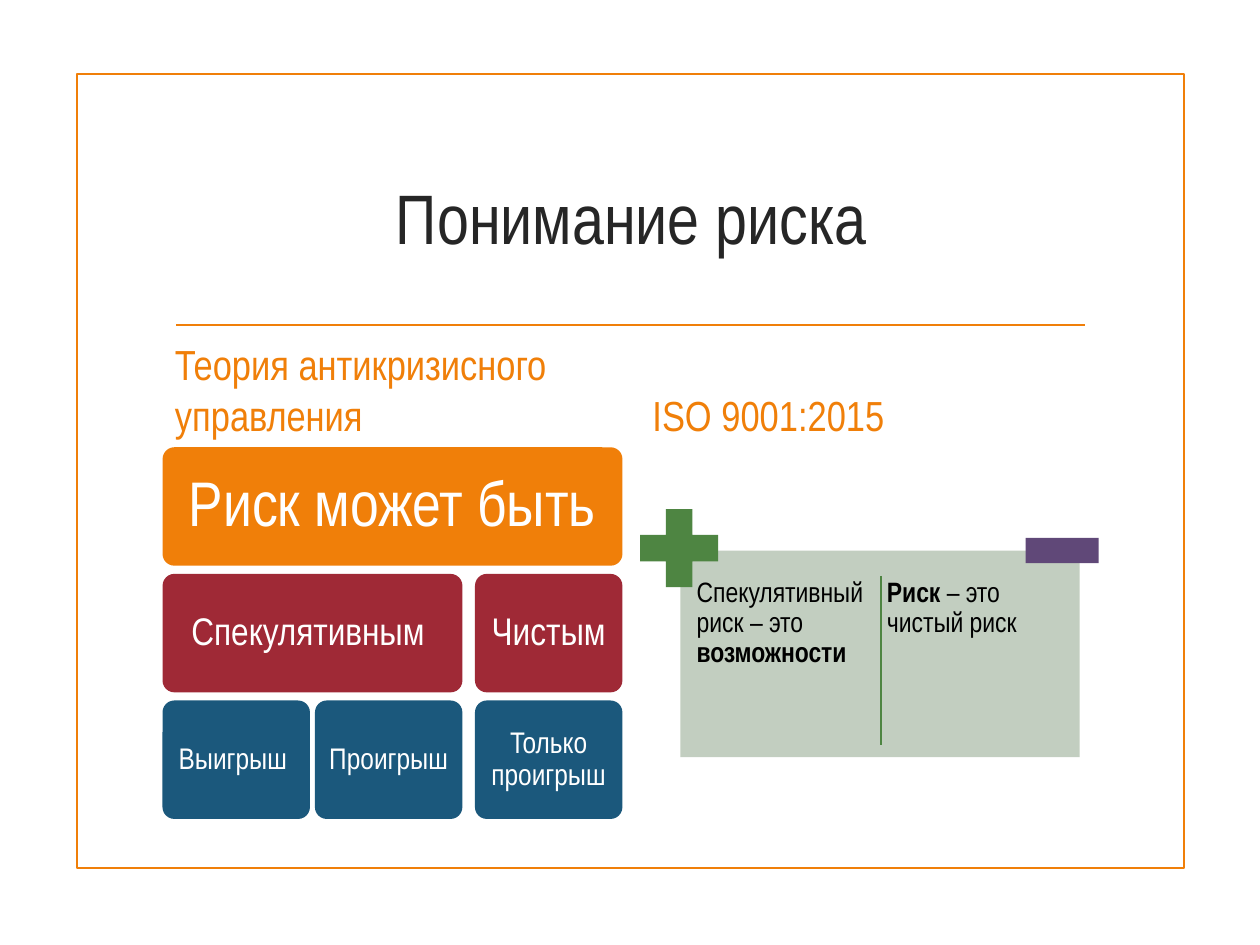
"""Build the slide on understanding risk."""
from typing import NamedTuple

from lxml import etree
from pptx import Presentation
from pptx.dml.color import RGBColor
from pptx.enum.shapes import MSO_CONNECTOR, MSO_SHAPE
from pptx.enum.text import MSO_ANCHOR, PP_ALIGN
from pptx.oxml.ns import qn
from pptx.util import Inches, Pt

RECT, ROUND, PLUS = MSO_SHAPE.RECTANGLE, MSO_SHAPE.ROUNDED_RECTANGLE, MSO_SHAPE.CROSS
STRAIGHT = MSO_CONNECTOR.STRAIGHT
TOP, MIDDLE, BOTTOM = MSO_ANCHOR.TOP, MSO_ANCHOR.MIDDLE, MSO_ANCHOR.BOTTOM
LEFT, CENTER = PP_ALIGN.LEFT, PP_ALIGN.CENTER

ORANGE = RGBColor(0xF0, 0x7F, 0x09)
RED = RGBColor(0x9F, 0x29, 0x36)
BLUE = RGBColor(0x1B, 0x58, 0x7C)
GREEN = RGBColor(0x4E, 0x85, 0x42)
PURPLE = RGBColor(0x60, 0x48, 0x78)
SAGE = RGBColor(0xC2, 0xCE, 0xC0)
DARK = RGBColor(0x26, 0x26, 0x26)
BLACK = RGBColor(0, 0, 0)
WHITE = RGBColor(0xFF, 0xFF, 0xFF)

FONT = "Arial Narrow"
LINE_WIDTH = Pt(1.25)
TREE_LEFT, TREE_TOP = 1.29, 3.55
TILE_H, ROW_STEP = 0.94, 1.005


class Box(NamedTuple):
    left: float
    top: float
    width: float
    height: float


class Run(NamedTuple):
    text: str
    bold: bool = False


class Style(NamedTuple):
    size: int
    color: RGBColor
    align: PP_ALIGN = LEFT
    anchor: MSO_ANCHOR = TOP
    inset: float = 0.03
    spacing: float = 0.9


class Level(NamedTuple):
    fill: RGBColor
    size: int
    inset: float


class Tile(NamedTuple):
    text: str
    row: int
    offset: float
    width: float


class Label(NamedTuple):
    box: Box
    runs: list[Run]
    style: Style


TITLE = Style(40, DARK, CENTER, MIDDLE, 0.1, 1)
HEADING = Style(24, ORANGE, LEFT, BOTTOM, 0.1, 1)
OPINION = Style(16, BLACK)

LEVELS = [Level(ORANGE, 36, 0.15), Level(RED, 22, 0.09), Level(BLUE, 17, 0.07)]
TILES = [
    Tile("Риск может быть", 0, 0, 3.65),
    Tile("Спекулятивным ", 1, 0, 2.38),
    Tile("Чистым ", 1, 2.48, 1.17),
    Tile("Выигрыш ", 2, 0, 1.17),
    Tile("Проигрыш ", 2, 1.21, 1.17),
    Tile("Только проигрыш", 2, 2.48, 1.17),
]
LABELS = [
    Label(Box(1.29, 1, 7.44, 1.43), [Run("Понимание риска")], TITLE),
    Label(Box(1.29, 2.91, 3.65, 0.63), [Run("Теория антикризисного управления")], HEADING),
    Label(Box(5.08, 2.91, 3.65, 0.63), [Run("ISO 9001:2015")], HEADING),
    Label(Box(5.5, 4.56, 1.47, 1.4),
          [Run("Спекулятивный риск – это "), Run("возможности", True)], OPINION),
    Label(Box(7.01, 4.56, 1.47, 1.4),
          [Run("Риск", True), Run(" – это чистый риск")], OPINION),
]


def write(sp, runs: list[Run], style: Style) -> None:
    tf = sp.text_frame
    tf.word_wrap = True
    tf.vertical_anchor = style.anchor
    tf.margin_left = tf.margin_right = Inches(style.inset)
    tf.margin_top = tf.margin_bottom = Inches(min(style.inset, 0.05) if style.inset == 0.1 else style.inset)
    p = tf.paragraphs[0]
    p.alignment = style.align
    p.line_spacing = style.spacing
    for run in runs:
        r = p.add_run()
        r.text = run.text
        r.font.name = FONT
        r.font.size = Pt(style.size)
        r.font.bold = run.bold
        r.font.color.rgb = style.color


def add_block(s, kind: MSO_SHAPE, box: Box, fill: RGBColor, adjust: float | None = None):
    sp = s.shapes.add_shape(kind, *map(Inches, box))
    sp.shadow.inherit = False
    sp.fill.solid()
    sp.fill.fore_color.rgb = fill
    sp.line.fill.background()
    if adjust is not None:
        sp.adjustments[0] = adjust
    return sp


def add_frame(s, box: Box) -> None:
    sp = s.shapes.add_shape(RECT, *map(Inches, box))
    sp.shadow.inherit = False
    sp.fill.background()
    sp.line.color.rgb = ORANGE
    sp.line.width = LINE_WIDTH


def add_rule(s, x1: float, y1: float, x2: float, y2: float, color: RGBColor) -> None:
    sp = s.shapes.add_connector(STRAIGHT, *map(Inches, (x1, y1, x2, y2)))
    sp.line.color.rgb = color
    sp.line.width = LINE_WIDTH
    etree.SubElement(sp._element.spPr, qn("a:effectLst"))


def add_tile(s, tile: Tile) -> None:
    level = LEVELS[tile.row]
    box = Box(TREE_LEFT + tile.offset, TREE_TOP + tile.row * ROW_STEP, tile.width, TILE_H)
    sp = add_block(s, ROUND, box, level.fill, 0.1)
    write(sp, [Run(tile.text)], Style(level.size, WHITE, CENTER, MIDDLE, level.inset))


def add_label(s, label: Label) -> None:
    sp = s.shapes.add_textbox(*map(Inches, label.box))
    write(sp, label.runs, label.style)


def main() -> None:
    prs = Presentation()
    prs.slide_width, prs.slide_height = Inches(10), Inches(7.5)
    s = prs.slides.add_slide(prs.slide_layouts[6])
    add_frame(s, Box(0.61, 0.59, 8.79, 6.3))
    add_rule(s, 1.4, 2.58, 8.61, 2.58, ORANGE)
    for tile in TILES:
        add_tile(s, tile)
    add_block(s, RECT, Box(5.4, 4.37, 3.17, 1.64), SAGE)
    for label in LABELS:
        add_label(s, label)
    add_block(s, PLUS, Box(5.08, 4.04, 0.62, 0.62), GREEN, 0.33)
    add_block(s, RECT, Box(8.14, 4.27, 0.58, 0.2), PURPLE)
    add_rule(s, 6.99, 4.57, 6.99, 5.91, GREEN)
    prs.save("out.pptx")


if __name__ == "__main__":
    main()
